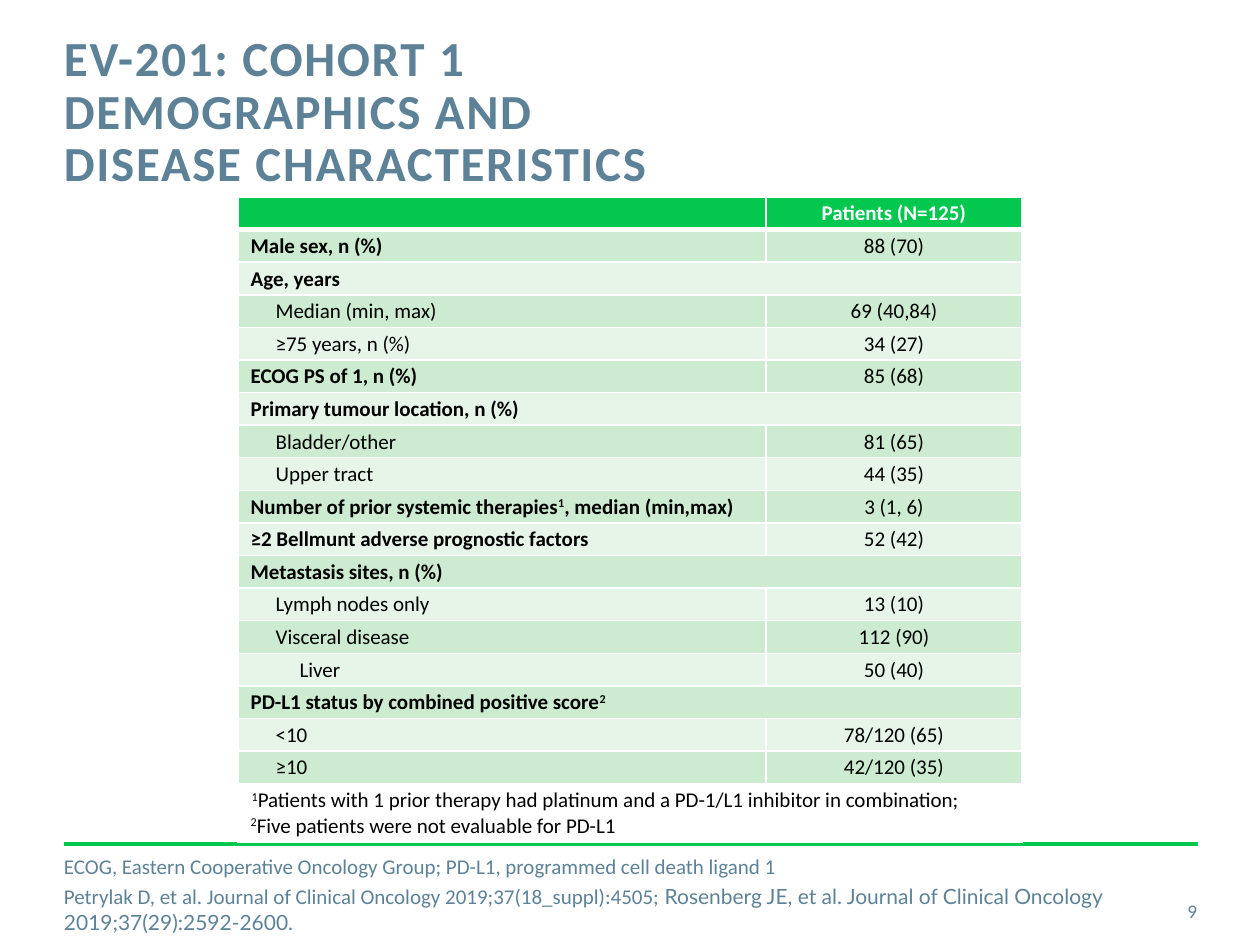
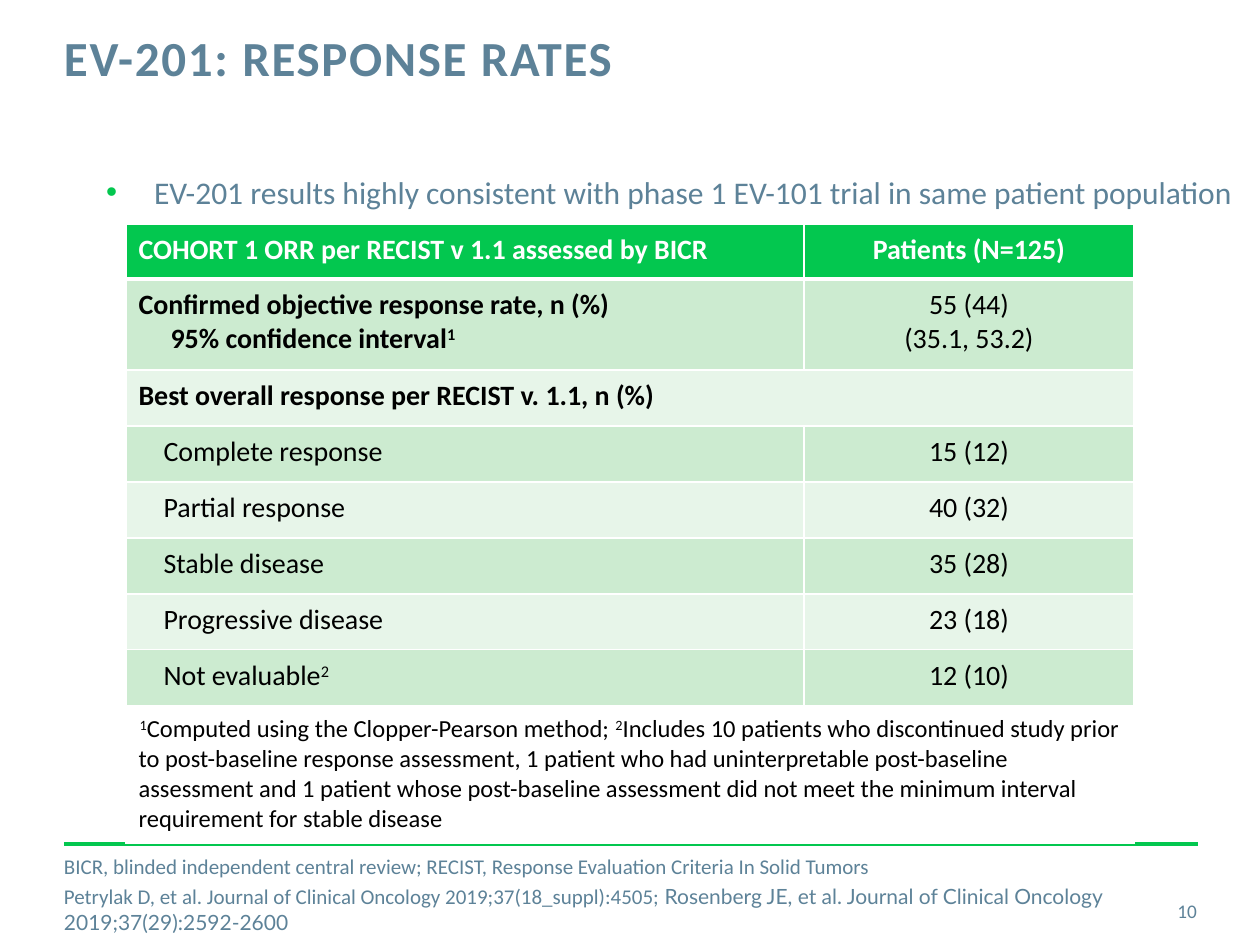
from dataclasses import dataclass
from typing import Optional

from lxml import etree
from pptx import Presentation
from pptx import util as u
from pptx.dml.color import RGBColor
from pptx.enum import shapes, text
from pptx.oxml import ns

# Shared look
SCALE = 914400 / 126
GREEN, SLATE, WHITE, BLACK = "03C74F", "5D8298", "FFFFFF", "000000"
BANDS = ("CCEBD0", "E7F5E9")
FACE, ALT = "Calibri", "Lato"
LEFT, MID, RIGHT = text.PP_ALIGN.LEFT, text.PP_ALIGN.CENTER, text.PP_ALIGN.RIGHT
CITE = "Petrylak D, et al. Journal of Clinical Oncology 2019;37(18_suppl):4505; "
CITE_ALT = "Rosenberg JE, et al. Journal of Clinical Oncology 2019;37(29):2592-2600"


@dataclass
class Style:
    size: int
    color: str = SLATE
    bold: bool = False
    align: text.PP_ALIGN = LEFT


@dataclass
class Row:
    label: str
    value: Optional[str] = None  # None lets the label span both columns
    indent: int = 0
    high: int = 0
    sub: int = 0  # indent of the label's second line


@dataclass
class Grid:
    left: int
    top: int
    cols: tuple
    high: int
    size: int
    pads: tuple  # top and bottom cell margins
    head: Row
    rows: list
    note: str
    note_size: int


@dataclass
class Page:
    title: str
    number: str
    terms: str
    end: str
    grid: Grid
    point: str = ""


def px(n: float) -> u.Emu:
    return u.Emu(round(n * SCALE))


def rgb(code: str) -> RGBColor:
    return RGBColor.from_string(code)


def write(par, words: str, style: Style) -> None:
    """Fill a paragraph; parts between ^ marks are raised."""
    par.alignment = style.align
    font = par.font
    font.name, font.size, font.bold = FACE, u.Pt(style.size), style.bold
    font.color.rgb = rgb(style.color)
    for i, part in enumerate(words.split("^")):
        if part:
            run = par.add_run()
            run.text = part
            if i % 2:
                run._r.get_or_add_rPr().set("baseline", "30000")


def fill_text(frame, words: str, style: Style) -> list:
    for i, line in enumerate(words.split("\n")):
        par = frame.add_paragraph() if i else frame.paragraphs[0]
        write(par, line, style)
    return list(frame.paragraphs)


def add_box(slide, left: int, top: int, wide: int, high: int, anchor=None):
    frame = slide.shapes.add_textbox(px(left), px(top), px(wide), px(high)).text_frame
    frame.word_wrap = True
    frame.margin_left = frame.margin_right = frame.margin_top = frame.margin_bottom = 0
    if anchor:
        frame.vertical_anchor = anchor
    return frame


# Tables
def add_edges(cell, top: int, bottom: int) -> None:
    props = cell._tc.get_or_add_tcPr()
    for side, pts in (("L", 1), ("R", 1), ("T", top), ("B", bottom)):
        line = etree.SubElement(props, ns.qn(f"a:ln{side}"), w=str(u.Pt(pts)))
        solid = etree.SubElement(line, ns.qn("a:solidFill"))
        etree.SubElement(solid, ns.qn("a:srgbClr"), val=WHITE)


def add_grid(slide, grid: Grid) -> None:
    rows = [grid.head, *grid.rows, Row(grid.note, indent=1)]
    last = len(rows) - 1
    highs = [row.high or grid.high for row in rows]
    table = slide.shapes.add_table(
        len(rows), 2, px(grid.left), px(grid.top), px(sum(grid.cols)), px(sum(highs))
    ).table
    table.horz_banding = False
    for col, wide in zip(table.columns, grid.cols):
        col.width = px(wide)
    for i, row in enumerate(rows):
        table.rows[i].height = px(highs[i])
        cells = [table.cell(i, 0), table.cell(i, 1)]
        for cell in cells:
            cell.margin_left = cell.margin_right = px(12.6)
            cell.margin_top, cell.margin_bottom = map(px, grid.pads)
            add_edges(cell, 3 if i == 1 else 1, 1 if i else 3)
            if i == last:
                cell.fill.background()
            else:
                cell.fill.solid()
                cell.fill.fore_color.rgb = rgb(BANDS[(i - 1) % 2] if i else GREEN)
        color = BLACK if i else WHITE
        size = grid.note_size if i == last else grid.size
        pars = fill_text(cells[0].text_frame, row.label, Style(size, color, not row.indent))
        for par, gap in zip(pars, (row.indent, row.sub)):
            if gap:
                par._p.get_or_add_pPr().set("indent", str(px(gap)))
        if row.value is None:
            cells[0].merge(cells[1])
        else:
            fill_text(cells[1].text_frame, row.value, Style(size, color, not i, MID))


# Slide parts
def add_rule(slide) -> None:
    rule = slide.shapes.add_connector(
        shapes.MSO_CONNECTOR.STRAIGHT, px(64), px(844), px(1198), px(844)
    )
    rule.line.color.rgb = rgb(GREEN)
    rule.line.width = u.Pt(2)
    etree.SubElement(rule._element.spPr, ns.qn("a:effectLst"))


def add_title(slide, words: str) -> None:
    for par in fill_text(add_box(slide, 64, 34, 903, 111), words, Style(28, bold=True)):
        par.line_spacing = u.Pt(30)
        for run in par.runs:
            run._r.get_or_add_rPr().set("spc", "100")


def add_foot(slide, page: Page) -> None:
    middle = text.MSO_ANCHOR.MIDDLE
    number = add_box(slide, 1116, 886, 81, 50, middle)
    fill_text(number, page.number, Style(11, align=RIGHT))
    frame = add_box(slide, 64, 869, 1082, 50, middle)
    cite = fill_text(frame, page.terms + "\n" + CITE, Style(12))[1]
    cite.space_before = u.Pt(3)
    run = cite.add_run()
    run.text = CITE_ALT + page.end
    run.font.name = ALT


def add_point(slide, words: str) -> None:
    par = add_box(slide, 106, 173, 1150, 50).paragraphs[0]
    props = par._p.get_or_add_pPr()
    props.set("marL", str(px(48)))
    props.set("indent", str(px(-48)))
    color = etree.SubElement(props, ns.qn("a:buClr"))
    etree.SubElement(color, ns.qn("a:srgbClr"), val=GREEN)
    etree.SubElement(props, ns.qn("a:buFont"), typeface="Arial")
    etree.SubElement(props, ns.qn("a:buChar"), char="•")
    write(par, words, Style(18))


# Content
PATIENTS = "Patients (N=125)"
TRAITS = Grid(
    238, 197, (528, 256), 29, 12, (4, 3), Row("", PATIENTS),
    [
        Row("Male sex, n (%)", "88 (70)"),
        Row("Age, years"),
        Row("Median (min, max)", "69 (40,84)", 25),
        Row("≥75 years, n (%)", "34 (27)", 25),
        Row("ECOG PS of 1, n (%)", "85 (68)"),
        Row("Primary tumour location, n (%)"),
        Row("Bladder/other", "81 (65)", 25),
        Row("Upper tract", "44 (35)", 25),
        Row("Number of prior systemic therapies^1^, median (min,max)", "3 (1, 6)"),
        Row("≥2 Bellmunt adverse prognostic factors", "52 (42)"),
        Row("Metastasis sites, n (%)"),
        Row("Lymph nodes only", "13 (10)", 25),
        Row("Visceral disease", "112 (90)", 25),
        Row("Liver", "50 (40)", 49),
        Row("PD-L1 status by combined positive score^2^"),
        Row("<10", "78/120 (65)", 25),
        Row("≥10", "42/120 (35)", 25),
    ],
    "^1^Patients with 1 prior therapy had platinum and a PD-1/L1 inhibitor in combination;\n"
    "^2^Five patients were not evaluable for PD-L1",
    12,
)
RATES = Grid(
    126, 224, (678, 330), 56, 16, (9, 9),
    Row("COHORT 1 ORR per RECIST v 1.1 assessed by BICR", PATIENTS, high=55),
    [
        Row("Confirmed objective response rate, n (%)\n95% confidence interval^1^",
            "55 (44)\n(35.1, 53.2)", high=91, sub=32),
        Row("Best overall response per RECIST v. 1.1, n (%)"),
        Row("Complete response", "15 (12)", 25),
        Row("Partial response", "40 (32)", 25),
        Row("Stable disease", "35 (28)", 25),
        Row("Progressive disease", "23 (18)", 25),
        Row("Not evaluable^2^", "12 (10)", 25),
    ],
    "^1^Computed using the Clopper-Pearson method; ^2^Includes 10 patients who "
    "discontinued study prior to post-baseline response assessment, 1 patient who had "
    "uninterpretable post-baseline assessment and 1 patient whose post-baseline assessment "
    "did not meet the minimum interval requirement for stable disease",
    14,
)
PAGES = [
    Page(
        "EV-201: COHORT 1\nDEMOGRAPHICS AND\nDISEASE CHARACTERISTICS", "9",
        "ECOG, Eastern Cooperative Oncology Group; PD-L1, programmed cell death ligand 1",
        ".", TRAITS,
    ),
    Page(
        "EV-201: RESPONSE RATES", "10",
        "BICR, blinded independent central review; RECIST, Response Evaluation Criteria "
        "In Solid Tumors",
        "", RATES,
        "EV-201 results highly consistent with phase 1 EV-101 trial in same patient population",
    ),
]


def main() -> None:
    deck = Presentation()
    deck.slide_width, deck.slide_height = px(1260), px(945)
    for page in PAGES:
        slide = deck.slides.add_slide(deck.slide_layouts[6])
        add_rule(slide)
        add_grid(slide, page.grid)
        add_title(slide, page.title)
        add_foot(slide, page)
        if page.point:
            add_point(slide, page.point)
    deck.save("out.pptx")


if __name__ == "__main__":
    main()
